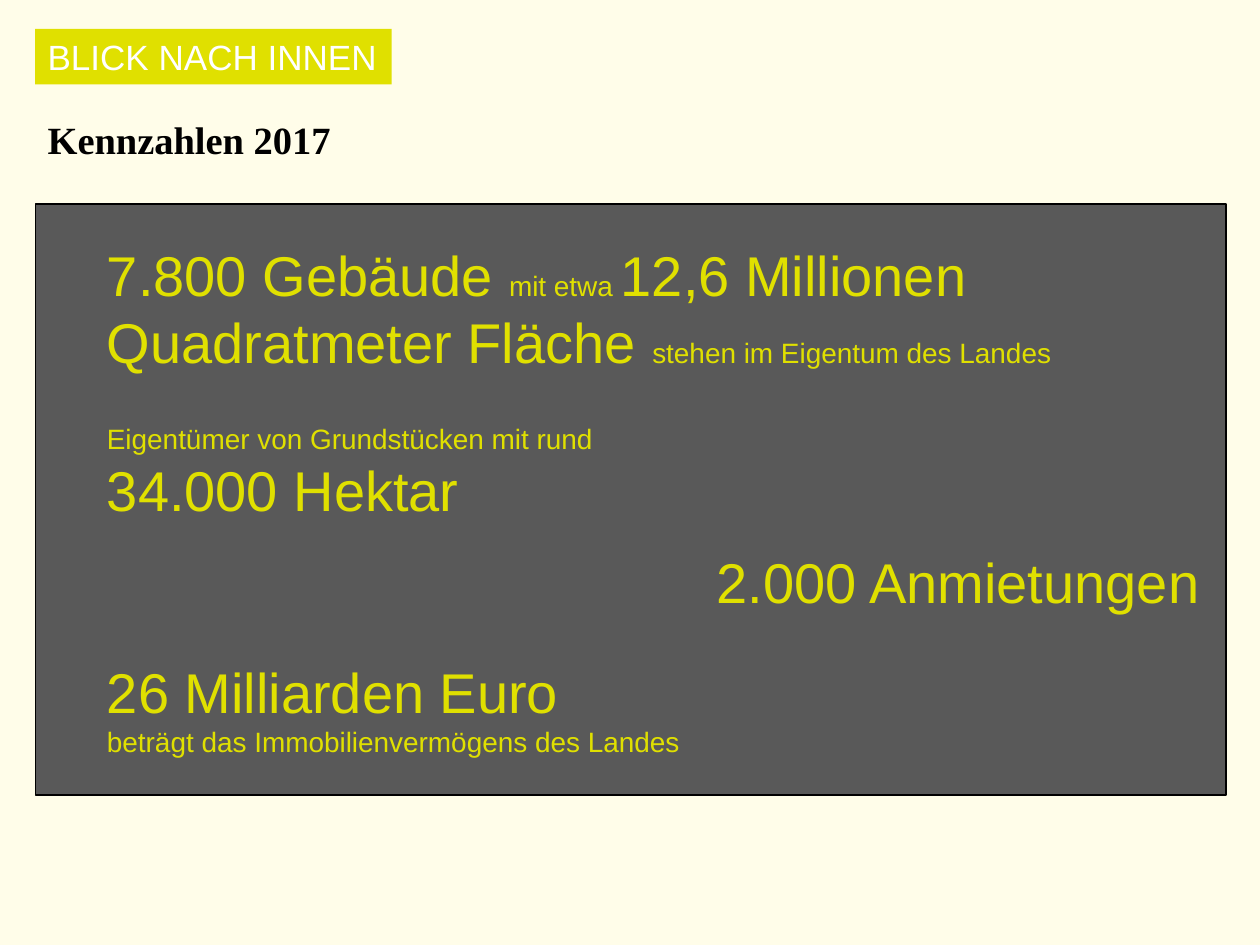
"""Build the key figures slide for 2017."""
from pptx import Presentation, util as u
from pptx.dml.color import RGBColor
from pptx.enum import shapes, text

CREAM = RGBColor(0xFF, 0xFD, 0xE9)
GREY = RGBColor(0x59, 0x59, 0x59)
LIME = RGBColor(0xE0, 0xE0, 0x00)
WHITE = RGBColor(0xFF, 0xFF, 0xFF)
BLACK = RGBColor(0x00, 0x00, 0x00)
BIG, SMALL = 32, 16
MARGIN, INDENT = 0.28, 0.75

deck = Presentation()
deck.slide_width, deck.slide_height = u.Inches(10), u.Inches(7.5)
page = deck.slides.add_slide(deck.slide_layouts[6])
page.background.fill.solid()
page.background.fill.fore_color.rgb = CREAM


def add_rectangle(area, color):
    box = page.shapes.add_shape(shapes.MSO_SHAPE.RECTANGLE, *map(u.Inches, area))
    box.shadow.inherit = False
    box.fill.solid()
    box.fill.fore_color.rgb = color
    box.line.fill.background()
    return box


def write(box, lines, color, name="Arial", bold=False, wrap=True):
    frame = box.text_frame
    frame.word_wrap = wrap
    frame.auto_size = text.MSO_AUTO_SIZE.SHAPE_TO_FIT_TEXT
    frame.vertical_anchor = text.MSO_ANCHOR.TOP
    para = frame.paragraphs[0]
    para.alignment = text.PP_ALIGN.LEFT
    for number, line in enumerate(lines):
        if number:
            para.add_line_break()
        for words, size in line:
            span = para.add_run()
            span.text = words
            span.font.size = u.Pt(size)
            span.font.name = name
            span.font.bold = bold
            span.font.color.rgb = color


panel = add_rectangle((MARGIN, 1.62, 9.45, 4.69), GREY)
panel.line.color.rgb = BLACK
panel.line.width = u.Pt(0.75)

banner = add_rectangle((MARGIN, 0.23, 2.83, 0.44), LIME)
write(banner, [[("BLICK NACH INNEN", 20)]], WHITE)

figures = [
    ((INDENT, 1.86, 8.58, 1.18), True,
     [[("7.800 Gebäude ", BIG), ("mit etwa ", SMALL),
       ("12,6 Millionen Quadratmeter Fläche ", BIG),
       ("stehen im Eigentum des Landes", SMALL)]]),
    ((INDENT, 3.3, 7.72, 0.91), True,
     [[("Eigentümer von Grundstücken mit rund ", SMALL)],
      [("34.000 Hektar", BIG)]]),
    ((5.59, 4.3, 4.06, 0.64), False, [[("2.000 Anmietungen", BIG)]]),
    ((INDENT, 5.17, 8.98, 0.91), True,
     [[("26 Milliarden Euro ", BIG)],
      [("beträgt das Immobilienvermögens des Landes", SMALL)]]),
]
for area, wrap, lines in figures:
    box = page.shapes.add_textbox(*map(u.Inches, area))
    write(box, lines, LIME, wrap=wrap)

heading = page.shapes.add_textbox(*map(u.Inches, (MARGIN, 0.87, 9.38, 0.47)))
write(heading, [[("Kennzahlen 2017", 22)]], BLACK, "Times New Roman", bold=True)

deck.save("out.pptx")
